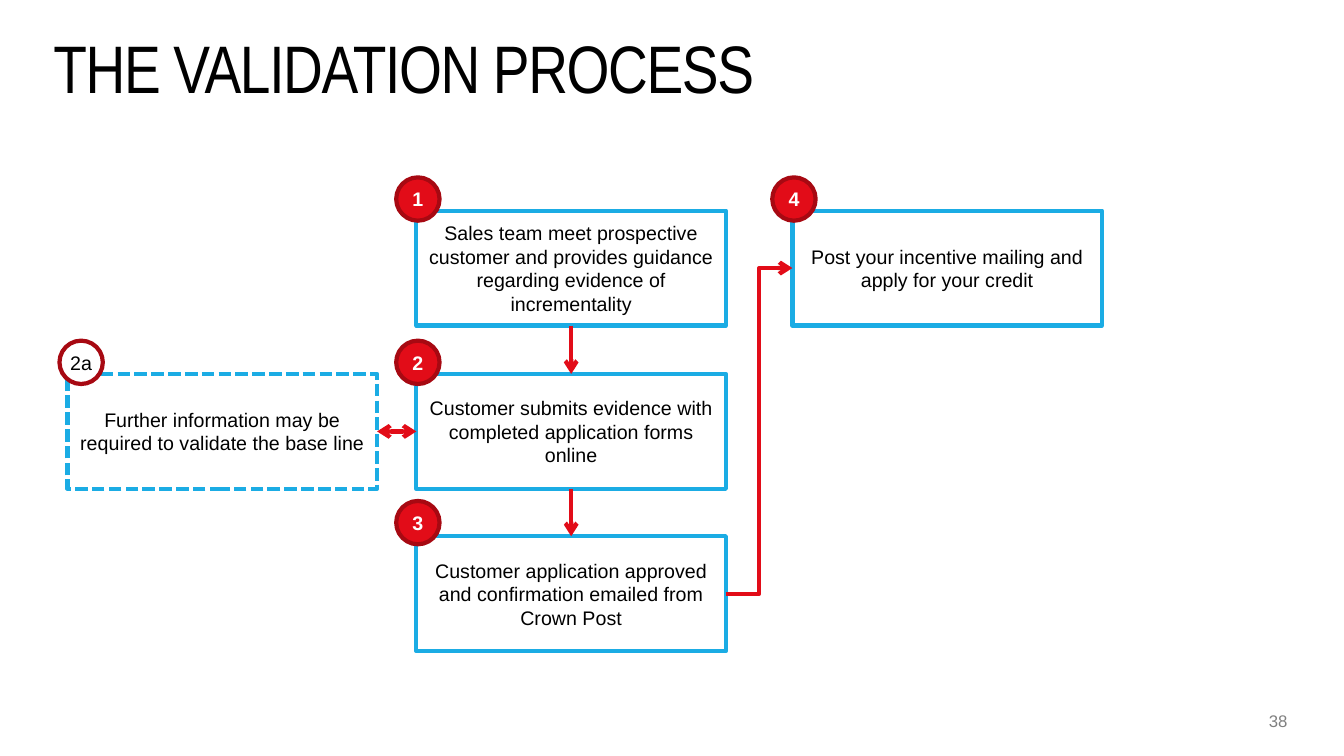
from lxml import etree
from pptx import Presentation
from pptx import util as u
from pptx.dml.color import RGBColor
from pptx.enum import dml, shapes, text
from pptx.oxml import ns

BLACK = RGBColor(0x00, 0x00, 0x00)
WHITE = RGBColor(0xFF, 0xFF, 0xFF)
GREY = RGBColor(0x80, 0x80, 0x80)
BLUE = RGBColor(0x1B, 0xAC, 0xE4)
RED = RGBColor(0xE2, 0x0C, 0x18)
DARK_RED = RGBColor(0xA7, 0x09, 0x12)

STEP_WIDTH, STEP_HEIGHT = 3.07, 1.14
BADGE_SIZE = 0.43
SIDE_COLUMN, MAIN_COLUMN, LAST_COLUMN = 0.67, 4.13, 7.86
TOP_ROW, MIDDLE_ROW, BOTTOM_ROW = 2.09, 3.71, 5.32
TOP, LEFT, BOTTOM, RIGHT = range(4)

STEPS = [
    ("1", "Sales team meet prospective customer and provides guidance "
          "regarding evidence of incrementality", MAIN_COLUMN, TOP_ROW, 0.2, 0.33),
    ("2", "Customer submits evidence with completed application forms online",
     MAIN_COLUMN, MIDDLE_ROW, 0.2, 0.33),
    ("3", "Customer application approved and confirmation emailed from Crown Post",
     MAIN_COLUMN, BOTTOM_ROW, 0.2, 0.35),
    ("2a", "Further information may be required to validate the base line",
     SIDE_COLUMN, MIDDLE_ROW, 0.08, 0.33),
    ("4", "Post your incentive mailing and apply for your credit",
     LAST_COLUMN, TOP_ROW, 0.2, 0.33),
]


def place(shape, left, top, width, height):
    shape.left, shape.top = u.Inches(left), u.Inches(top)
    shape.width, shape.height = u.Inches(width), u.Inches(height)


def set_margins(frame, horizontal, vertical):
    frame.margin_left = frame.margin_right = u.Inches(horizontal)
    frame.margin_top = frame.margin_bottom = u.Inches(vertical)


def write(frame, wording, size, color, align, name="Arial", bold=False):
    frame.text = wording
    frame.word_wrap = True
    paragraph = frame.paragraphs[0]
    paragraph.alignment = align
    font = paragraph.runs[0].font
    font.name, font.size, font.bold = name, u.Pt(size), bold
    font.color.rgb = color
    return paragraph


def set_line(line, color, dashed=False):
    line.color.rgb = color
    line.width = u.Pt(3)
    if dashed:
        line.dash_style = dml.MSO_LINE.SQUARE_DOT


def add_title(slide, wording):
    title = slide.shapes.title
    place(title, 0.53, 0.45, 12.2, 0.52)
    frame = title.text_frame
    frame.auto_size = text.MSO_AUTO_SIZE.NONE
    frame.vertical_anchor = text.MSO_ANCHOR.TOP
    set_margins(frame, 0, 0)
    paragraph = write(frame, wording, 48, BLACK, text.PP_ALIGN.LEFT, "Arial Narrow")
    paragraph.line_spacing = u.Pt(44)
    paragraph.runs[0].font._element.set("spc", "-100")


def add_page_number(slide, number):
    box = slide.shapes.add_textbox(u.Inches(12.3), u.Inches(7.05), u.Inches(0.47), u.Inches(0.2))
    set_margins(box.text_frame, 0, 0)
    write(box.text_frame, number, 12, GREY, text.PP_ALIGN.RIGHT)


def add_outlined(slide, kind, bounds, wording, line_color, fill=None,
                 color=BLACK, bold=False, dashed=False):
    shape = slide.shapes.add_shape(kind, *map(u.Inches, bounds))
    shape.shadow.inherit = False
    if fill is None:
        shape.fill.background()
    else:
        shape.fill.solid()
        shape.fill.fore_color.rgb = fill
    set_line(shape.line, line_color, dashed)
    shape.text_frame.vertical_anchor = text.MSO_ANCHOR.MIDDLE
    write(shape.text_frame, wording, 14, color, text.PP_ALIGN.CENTER, bold=bold)
    return shape


def add_step(slide, label, wording, left, top, badge_left, badge_rise):
    optional = not label.isdigit()
    box = add_outlined(slide, shapes.MSO_SHAPE.RECTANGLE,
                       (left, top, STEP_WIDTH, STEP_HEIGHT), wording, BLUE, dashed=optional)
    badge = add_outlined(slide, shapes.MSO_SHAPE.OVAL,
                         (left - badge_left, top - badge_rise, BADGE_SIZE, BADGE_SIZE),
                         label, DARK_RED, WHITE if optional else RED,
                         BLACK if optional else WHITE, bold=not optional)
    if optional:
        set_margins(badge.text_frame, 0, 0.05)
    return box


def add_arrow(slide, start, start_side, end, end_side,
              kind=shapes.MSO_CONNECTOR.STRAIGHT, two_way=False):
    connector = slide.shapes.add_connector(kind, 0, 0, 0, 0)
    connector.begin_connect(start, start_side)
    connector.end_connect(end, end_side)
    set_line(connector.line, RED, dashed=two_way)
    outline = connector.line._get_or_add_ln()
    for tag in ("a:headEnd", "a:tailEnd") if two_way else ("a:tailEnd",):
        etree.SubElement(outline, ns.qn(tag), type="arrow")
    etree.SubElement(connector._element.spPr, ns.qn("a:effectLst"))


def main():
    presentation = Presentation()
    presentation.slide_width = u.Inches(13.33)
    presentation.slide_height = u.Inches(7.5)
    slide = presentation.slides.add_slide(presentation.slide_layouts[5])
    add_title(slide, "THE VALIDATION PROCESS")
    add_page_number(slide, "38")
    boxes = {step[0]: add_step(slide, *step) for step in STEPS}
    add_arrow(slide, boxes["1"], BOTTOM, boxes["2"], TOP)
    add_arrow(slide, boxes["2"], BOTTOM, boxes["3"], TOP)
    add_arrow(slide, boxes["2a"], RIGHT, boxes["2"], LEFT, two_way=True)
    add_arrow(slide, boxes["3"], RIGHT, boxes["4"], LEFT, shapes.MSO_CONNECTOR.ELBOW)
    presentation.save("out.pptx")


if __name__ == "__main__":
    main()
